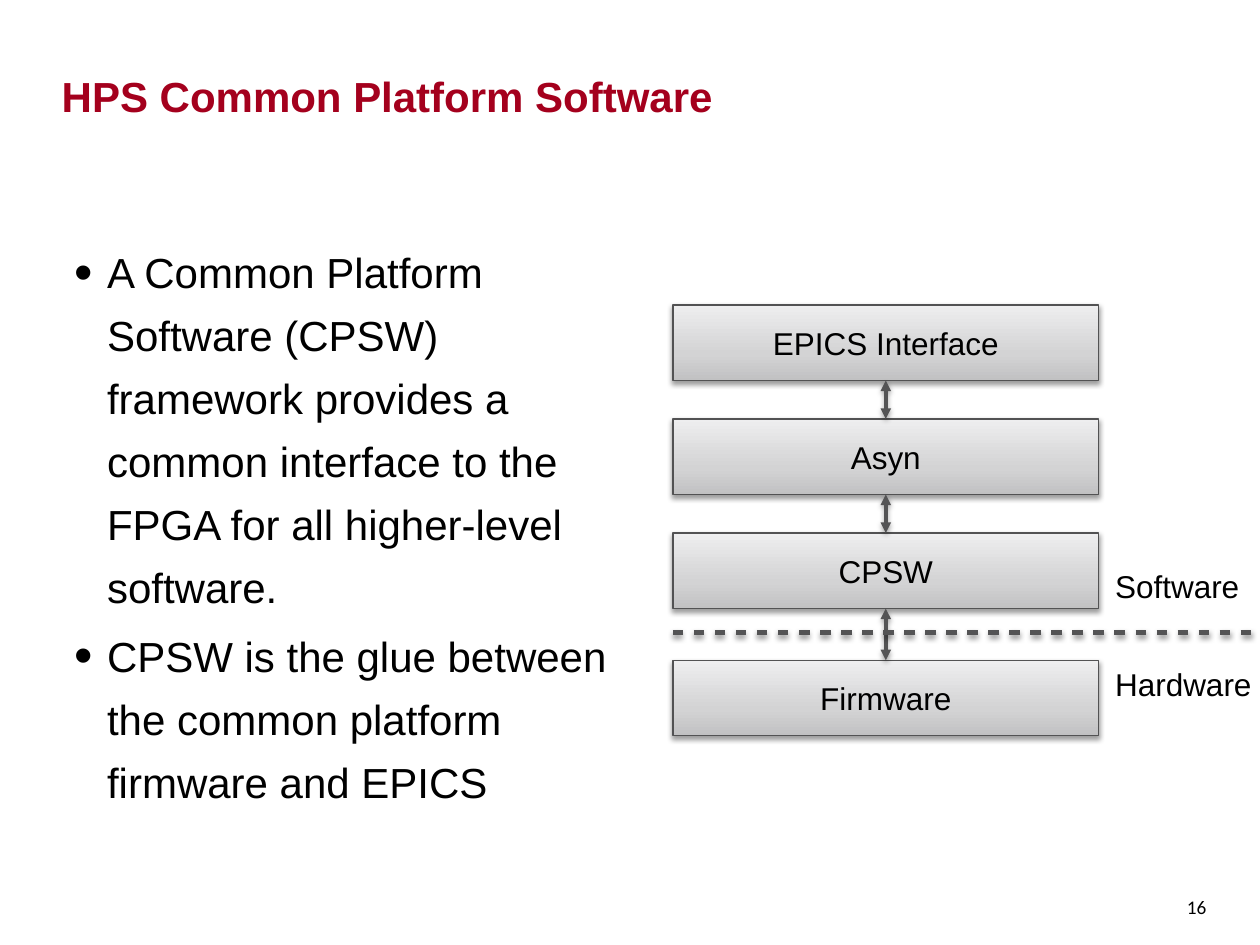
from itertools import pairwise

from lxml import etree
from pptx import Presentation
from pptx import util as u
from pptx.dml.color import RGBColor
from pptx.enum import dml, shapes, text
from pptx.oxml import parse_xml
from pptx.oxml.ns import nsdecls, qn

COLORS = {
    "title": "A4001D",
    "text": "000000",
    "box_line": "525253",
    "line": "545455",
    "shadow": "000000",
}
BOX_GRADIENT = [(0, "C1C1C2"), (35, "D3D3D4"), (100, "EEEEEF")]


def rgb(name):
    return RGBColor.from_string(COLORS[name])


def style_runs(frame, size, color="text", font="Arial", bold=False):
    for paragraph in frame.paragraphs:
        for run in paragraph.runs:
            run.font.size = u.Pt(size)
            run.font.name = font
            run.font.bold = bold
            run.font.color.rgb = rgb(color)


def set_margins(frame, margin):
    frame.margin_left = frame.margin_right = u.Inches(margin)
    frame.margin_top = frame.margin_bottom = u.Inches(margin)


def add_text(slide, box, lines, anchor=text.MSO_ANCHOR.TOP, margin=0.0, wrap=True):
    frame = slide.shapes.add_textbox(*map(u.Inches, box)).text_frame
    set_margins(frame, margin)
    frame.word_wrap = wrap
    frame.vertical_anchor = anchor
    frame.text = "\n".join(lines)
    return frame


def add_shadow(properties):
    effects = properties.find(qn("a:effectLst"))
    if effects is None:
        effects = etree.SubElement(properties, qn("a:effectLst"))
    effects.append(parse_xml(
        f'<a:outerShdw {nsdecls("a")} blurRad="{u.Pt(3)}" dist="{u.Pt(1.6)}" '
        f'dir="5400000" rotWithShape="0"><a:srgbClr val="{COLORS["shadow"]}">'
        '<a:alpha val="38000"/></a:srgbClr></a:outerShdw>'))


def add_line(slide, start, end, width):
    line = slide.shapes.add_connector(
        shapes.MSO_CONNECTOR.STRAIGHT, *map(u.Inches, (*start, *end)))
    line.line.color.rgb = rgb("line")
    line.line.width = u.Pt(width)
    add_shadow(line._element.spPr)
    return line


def add_title(slide, box):
    frame = add_text(slide, box, ["HPS Common Platform Software"],
                     text.MSO_ANCHOR.BOTTOM)
    style_runs(frame, 24, "title", bold=True)


def add_bullets(slide, box, points):
    frame = add_text(slide, box, points, text.MSO_ANCHOR.MIDDLE)
    for index, paragraph in enumerate(frame.paragraphs):
        properties = paragraph._p.get_or_add_pPr()
        properties.set("marL", str(u.Inches(0.35)))
        properties.set("indent", str(u.Inches(-0.26)))
        etree.SubElement(properties, qn("a:buSzPct"), val="125000")
        etree.SubElement(properties, qn("a:buFont"), typeface="Arial")
        etree.SubElement(properties, qn("a:buChar"), char="•")
        paragraph.line_spacing = 1.25
        paragraph.space_before = u.Pt(3 if index else 0)
    style_runs(frame, 24)


def add_layer(slide, box, label):
    layer = slide.shapes.add_shape(
        shapes.MSO_SHAPE.RECTANGLE, *map(u.Inches, box))
    layer.fill.gradient()
    layer.fill.gradient_angle = 90
    stops = layer._element.spPr.find(qn("a:gradFill")).find(qn("a:gsLst"))
    for stop in list(stops):
        stops.remove(stop)
    for position, color in BOX_GRADIENT:
        stop = etree.SubElement(stops, qn("a:gs"), pos=str(position * 1000))
        etree.SubElement(stop, qn("a:srgbClr"), val=color)
    layer.line.color.rgb = rgb("box_line")
    layer.line.width = u.Pt(0.75)
    layer.shadow.inherit = False
    add_shadow(layer._element.spPr)

    frame = layer.text_frame
    set_margins(frame, 0.05)
    frame.vertical_anchor = text.MSO_ANCHOR.MIDDLE
    frame.text = label
    frame.paragraphs[0].alignment = text.PP_ALIGN.CENTER
    style_runs(frame, 18)
    return layer


def add_layer_stack(slide, box):
    left, top, width, height = box
    layer_width, layer_height, pitch = 3.38, 0.6, 0.905

    # Software layers at an even pitch, firmware at the bottom
    software = ["EPICS Interface", "Asyn", "CPSW"]
    tops = [top + i * pitch for i in range(len(software))]
    tops.append(top + height - layer_height)
    layers = [add_layer(slide, (left, y, layer_width, layer_height), label)
              for y, label in zip(tops, software + ["Firmware"])]

    # Two-way arrows between neighbouring layers
    middle = left + layer_width / 2
    for (upper, lower), (upper_top, lower_top) in zip(pairwise(layers), pairwise(tops)):
        arrow = add_line(slide, (middle, lower_top),
                         (middle, upper_top + layer_height), 2)
        arrow.begin_connect(lower, 0)
        arrow.end_connect(upper, 2)
        outline = arrow.line._get_or_add_ln()
        for end in ("a:headEnd", "a:tailEnd"):
            etree.SubElement(outline, qn(end), type="triangle")

    # Dashed boundary with a label on each side
    boundary = top + 2.6
    divider = add_line(slide, (left, boundary), (left + width, boundary), 3)
    divider.line.dash_style = dml.MSO_LINE.DASH
    outline = divider.line._get_or_add_ln()
    outline.replace(outline.find(qn("a:prstDash")), parse_xml(
        f'<a:custDash {nsdecls("a")}><a:ds d="200000" sp="200000"/></a:custDash>'))
    for label, y, label_width in (("Software", 2.03, 1.1), ("Hardware", 2.81, 1.2)):
        frame = add_text(slide, (left + 3.46, top + y, label_width, 0.38),
                         [label], margin=0.05, wrap=False)
        style_runs(frame, 18)


def add_page_number(slide, box):
    frame = add_text(slide, box, ["16"], text.MSO_ANCHOR.MIDDLE,
                     margin=0.05, wrap=False)
    style_runs(frame, 11, font="Calibri")


def main():
    deck = Presentation()
    deck.slide_width, deck.slide_height = u.Inches(10), u.Inches(7.5)
    slide = deck.slides.add_slide(deck.slide_layouts[6])

    add_title(slide, (0.49, 0.14, 8.86, 0.82))
    add_bullets(slide, (0.5, 1.36, 4.5, 5.54), [
        "A Common Platform Software (CPSW) framework provides a common "
        "interface to the FPGA for all higher-level software.",
        "CPSW is the glue between the common platform firmware and EPICS",
    ])
    add_layer_stack(slide, (5.34, 2.42, 4.64, 3.42))
    add_page_number(slide, (9.37, 7.07, 0.28, 0.26))
    deck.save("out.pptx")


if __name__ == "__main__":
    main()
